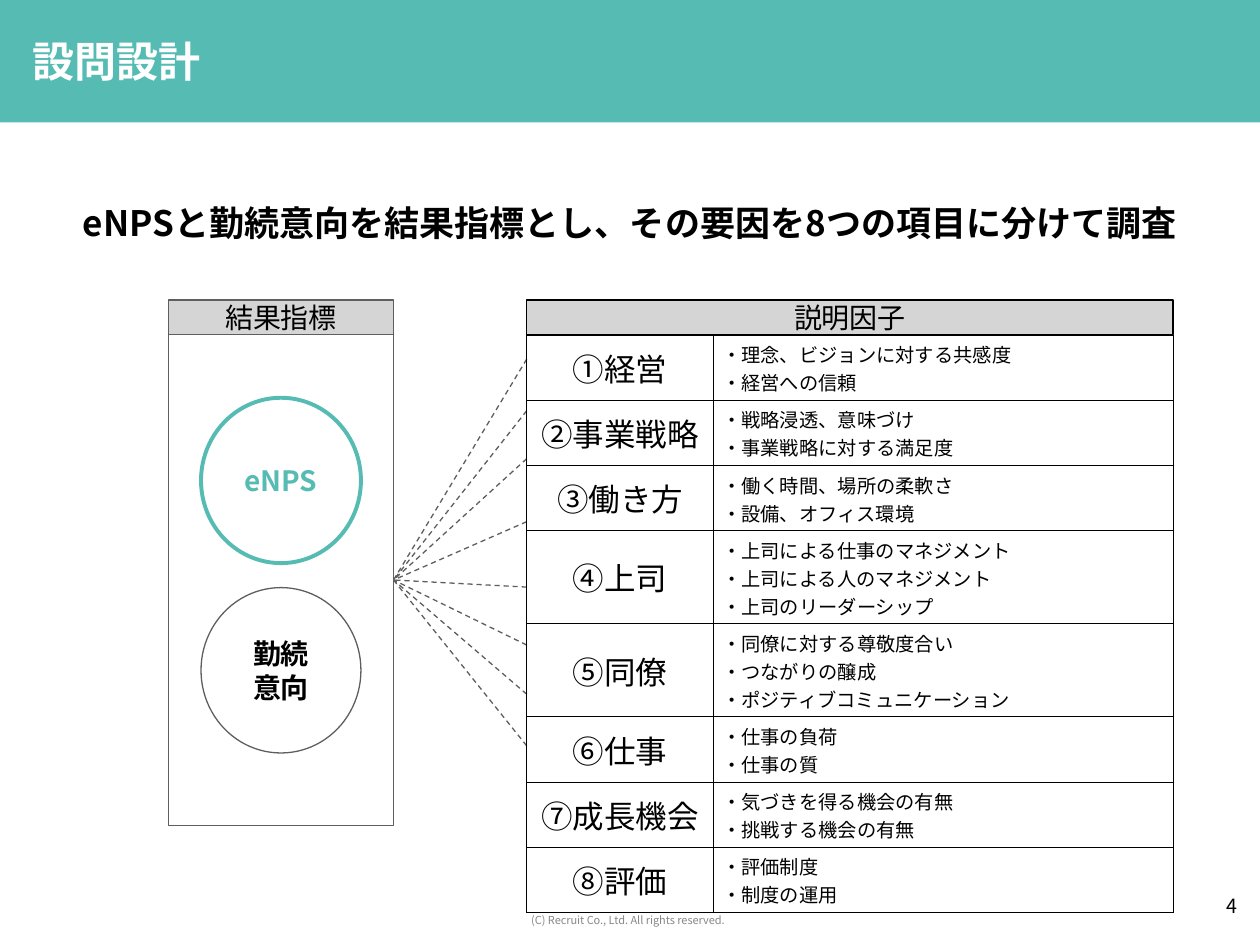
from dataclasses import dataclass

from lxml.etree import SubElement
from pptx import Presentation
from pptx.dml.color import RGBColor
from pptx.enum.dml import MSO_LINE_DASH_STYLE as Dash
from pptx.enum.lang import MSO_LANGUAGE_ID as Language
from pptx.enum.shapes import MSO_CONNECTOR as Connector, MSO_SHAPE as Preset
from pptx.enum.text import MSO_ANCHOR as Anchor, PP_ALIGN as Align
from pptx.oxml.ns import qn
from pptx.util import Pt

FONT = "Noto Sans CJK JP"
COLORS = {
    "teal": "55BBB3",
    "header": "D6D5D5",
    "outline": "5E5E5E",
    "black": "000000",
    "white": "FFFFFF",
    "footer": "888888",
}
INSETS = (5, 3, 5, 3)

FRAME_LEFT, FRAME_WIDTH = 96.3, 128.6
HEADER_TOP, HEADER_HEIGHT = 171.4, 19.8
FRAME_TOP, FRAME_HEIGHT = 191.2, 280.5
CIRCLE_WIDTH, CIRCLE_HEIGHT = 91.4, 94.5
CIRCLE_LEFT = FRAME_LEFT + (FRAME_WIDTH - CIRCLE_WIDTH) / 2
TABLE_LEFT, TABLE_TOP = 301, 191.4
COLUMN_WIDTHS = (106.6, 262.8)
ROW_HEIGHTS = {2: 37.3, 3: 53.2}
LINK_TOPS = (205.2, 234.7, 262.1, 298.1, 335.5, 368.6, 396.7, 426.2)


@dataclass(frozen=True)
class TextStyle:
    size: float
    color: str = "black"
    bold: bool = False
    align: Align = Align.CENTER
    anchor: Anchor = Anchor.MIDDLE
    insets: tuple = INSETS


@dataclass(frozen=True)
class Box:
    left: float
    top: float
    width: float
    height: float
    lines: tuple = ()
    style: TextStyle = TextStyle(16)
    preset: Preset = Preset.RECTANGLE
    fill: str | None = None
    outline: str | None = None
    outline_width: float = 0.75

    def place(self) -> tuple:
        return Pt(self.left), Pt(self.top), Pt(self.width), Pt(self.height)


@dataclass(frozen=True)
class Factor:
    name: str
    questions: tuple


FACTORS = (
    Factor("①経営", ("・理念、ビジョンに対する共感度", "・経営への信頼")),
    Factor("②事業戦略", ("・戦略浸透、意味づけ", "・事業戦略に対する満足度")),
    Factor("③働き方", ("・働く時間、場所の柔軟さ", "・設備、オフィス環境")),
    Factor("④上司", ("・上司による仕事のマネジメント", "・上司による人のマネジメント",
                   "・上司のリーダーシップ")),
    Factor("⑤同僚", ("・同僚に対する尊敬度合い", "・つながりの醸成",
                   "・ポジティブコミュニケーション")),
    Factor("⑥仕事", ("・仕事の負荷", "・仕事の質")),
    Factor("⑦成長機会", ("・気づきを得る機会の有無", "・挑戦する機会の有無")),
    Factor("⑧評価", ("・評価制度", "・制度の運用")),
)


def rgb(name: str) -> RGBColor:
    return RGBColor.from_string(COLORS[name])


def write_lines(frame, lines: tuple, style: TextStyle) -> None:
    for index, line in enumerate(lines):
        paragraph = frame.add_paragraph() if index else frame.paragraphs[0]
        paragraph.alignment = style.align
        run = paragraph.add_run()
        run.text = line
        font = run.font
        font.size, font.bold, font.name = Pt(style.size), style.bold, FONT
        font.color.rgb = rgb(style.color)
        font.language_id = Language.JAPANESE
        SubElement(run._r.get_or_add_rPr(), qn("a:ea"), typeface=FONT)


def fill_frame(frame, box: Box) -> None:
    frame.word_wrap = True
    frame.vertical_anchor = box.style.anchor
    (frame.margin_left, frame.margin_top,
     frame.margin_right, frame.margin_bottom) = map(Pt, box.style.insets)
    write_lines(frame, box.lines, box.style)


def add_text(slide, box: Box) -> None:
    fill_frame(slide.shapes.add_textbox(*box.place()).text_frame, box)


def add_box(slide, box: Box):
    shape = slide.shapes.add_shape(box.preset, *box.place())
    shape.shadow.inherit = False
    if box.fill:
        shape.fill.solid()
        shape.fill.fore_color.rgb = rgb(box.fill)
    else:
        shape.fill.background()
    if box.outline:
        shape.line.color.rgb = rgb(box.outline)
        shape.line.width = Pt(box.outline_width)
    else:
        shape.line.fill.background()
    fill_frame(shape.text_frame, box)
    return shape


def add_link(slide, top: float, frame) -> None:
    """Dashed line from the table's left edge to the right side of the frame."""
    link = slide.shapes.add_connector(
        Connector.STRAIGHT, Pt(TABLE_LEFT), Pt(top),
        Pt(FRAME_LEFT + FRAME_WIDTH), Pt(FRAME_TOP + FRAME_HEIGHT / 2))
    link.end_connect(frame, 3)
    link.line.color.rgb = rgb("outline")
    link.line.width = Pt(0.75)
    link.line.dash_style = Dash.DASH
    SubElement(link._element.spPr, qn("a:effectLst"))


def set_borders(cell) -> None:
    """Borders must come before the fill in the cell properties."""
    properties = cell._tc.get_or_add_tcPr()
    for side in ("a:lnL", "a:lnR", "a:lnT", "a:lnB"):
        line = SubElement(properties, qn(side), w=str(Pt(0.5)))
        solid = SubElement(line, qn("a:solidFill"))
        SubElement(solid, qn("a:srgbClr"), val=COLORS["black"])


def fill_cell(cell, lines: tuple, style: TextStyle) -> None:
    set_borders(cell)
    cell.fill.background()
    cell.vertical_anchor = style.anchor
    (cell.margin_left, cell.margin_top,
     cell.margin_right, cell.margin_bottom) = map(Pt, style.insets)
    write_lines(cell.text_frame, lines, style)


def add_factor_table(slide) -> None:
    heights = [ROW_HEIGHTS[len(factor.questions)] for factor in FACTORS]
    table = slide.shapes.add_table(
        len(FACTORS), len(COLUMN_WIDTHS), Pt(TABLE_LEFT), Pt(TABLE_TOP),
        Pt(sum(COLUMN_WIDTHS)), Pt(sum(heights))).table
    table.first_row = table.horz_banding = False
    for column, width in zip(table.columns, COLUMN_WIDTHS):
        column.width = Pt(width)
    name_style = TextStyle(18)
    question_style = TextStyle(11, align=Align.LEFT, anchor=Anchor.TOP)
    for row, height, factor in zip(table.rows, heights, FACTORS):
        row.height = Pt(height)
        fill_cell(row.cells[0], (factor.name,), name_style)
        fill_cell(row.cells[1], factor.questions, question_style)


def main() -> None:
    presentation = Presentation()
    presentation.slide_width, presentation.slide_height = Pt(720), Pt(540)
    slide = presentation.slides.add_slide(presentation.slide_layouts[6])

    add_box(slide, Box(0, 0, 720, 70, fill="teal"))
    add_text(slide, Box(196.2, 518.4, 325.4, 15.1,
                        ("(C) Recruit Co., Ltd. All rights reserved.",),
                        TextStyle(6.3, "footer", insets=(2, 3.6, 2, 3.6))))
    add_text(slide, Box(18.7, 18, 353.5, 33.1, ("設問設計",),
                        TextStyle(24, "white", True, Align.LEFT, insets=(0, 0, 0, 0))))
    add_text(slide, Box(19.4, 112.3, 681.1, 29.5,
                        ("eNPSと勤続意向を結果指標とし、その要因を8つの項目に分けて調査",),
                        TextStyle(20, bold=True, anchor=Anchor.TOP)))

    add_box(slide, Box(FRAME_LEFT, HEADER_TOP, FRAME_WIDTH, HEADER_HEIGHT,
                       ("結果指標",), fill="header", outline="outline"))
    frame = add_box(slide, Box(FRAME_LEFT, FRAME_TOP, FRAME_WIDTH, FRAME_HEIGHT,
                               outline="outline"))
    add_box(slide, Box(CIRCLE_LEFT, 227.3, CIRCLE_WIDTH, CIRCLE_HEIGHT, ("eNPS",),
                       TextStyle(16, "teal", True), Preset.OVAL,
                       outline="teal", outline_width=2.25))
    add_box(slide, Box(CIRCLE_LEFT, 335.8, CIRCLE_WIDTH, CIRCLE_HEIGHT, ("勤続", "意向"),
                       TextStyle(16, bold=True), Preset.OVAL, outline="outline"))

    for top in LINK_TOPS:
        add_link(slide, top, frame)
    add_factor_table(slide)
    add_box(slide, Box(TABLE_LEFT, HEADER_TOP, sum(COLUMN_WIDTHS), HEADER_HEIGHT,
                       ("説明因子",), fill="header", outline="black"))
    add_text(slide, Box(689.5, 506.9, 21.6, 21.6, ("4",),
                        TextStyle(11.2, align=Align.RIGHT, anchor=Anchor.TOP,
                                  insets=(4, 4, 4, 4))))
    presentation.save("out.pptx")


if __name__ == "__main__":
    main()
